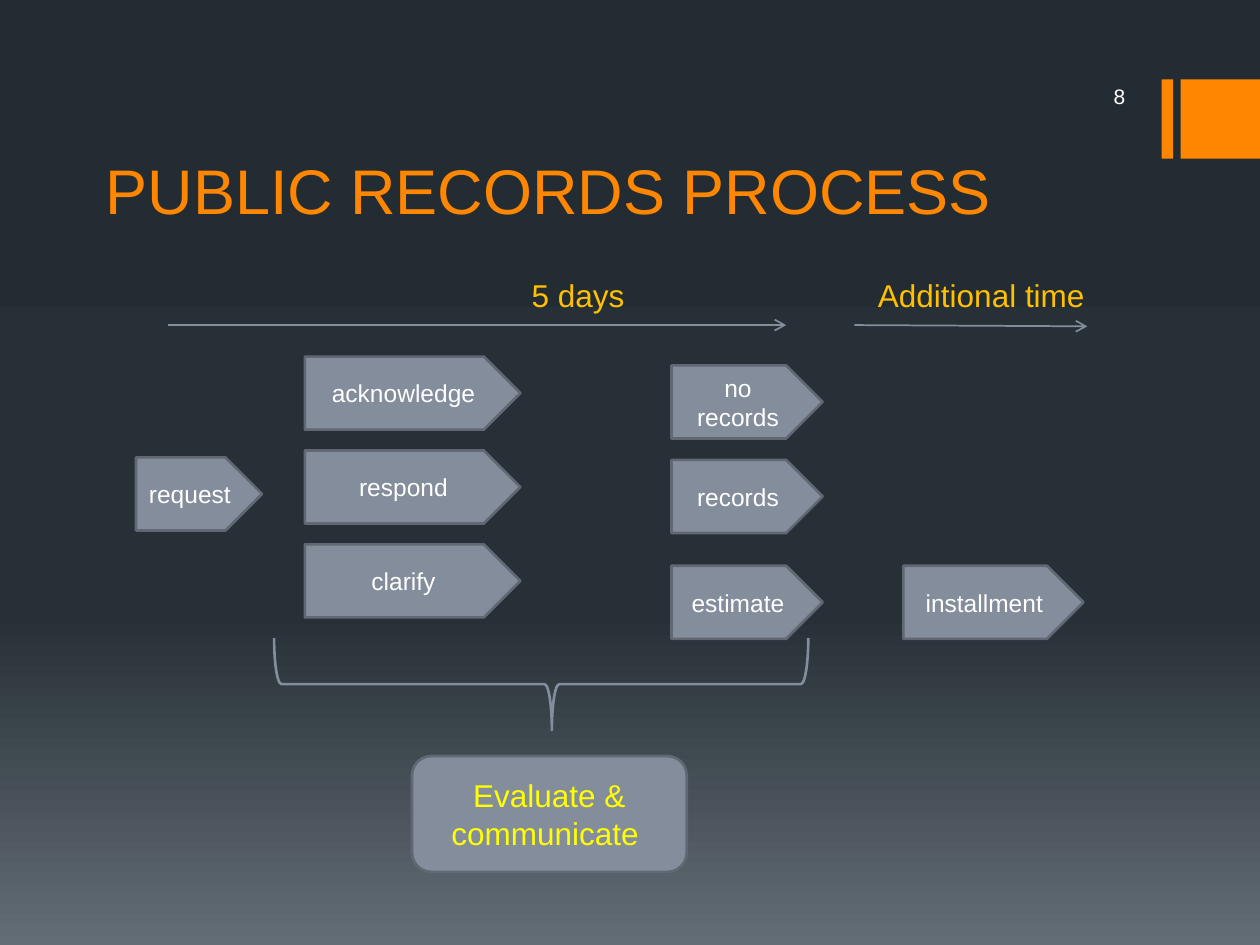
import copy
from dataclasses import dataclass

import pptx
import pptx.dml.color
import pptx.enum.shapes
import pptx.enum.text
import pptx.oxml
import pptx.oxml.ns
import pptx.util

SHAPE = pptx.enum.shapes.MSO_SHAPE
ALIGN = pptx.enum.text.PP_ALIGN
ANCHOR = pptx.enum.text.MSO_ANCHOR
COLUMNS, ROWS = 100, 75


@dataclass(frozen=True)
class Theme:
    font: str = "Arial"
    accent: str = "FF8600"
    steel: str = "838D9B"
    edge: str = "616873"
    white: str = "FFFFFF"
    yellow: str = "FFFF00"
    gold: str = "FFC000"
    backdrop: tuple = ((0, "242C33"), (0.65, "273037"), (1, "636D76"))
    title: int = 36
    label: int = 18
    step: int = 14
    number: int = 12
    thin: float = 1
    outline: float = 1.5


def color(code):
    return pptx.dml.color.RGBColor.from_string(code)


def assign(target, values):
    for name, value in values.items():
        setattr(target, name, value)


def append_element(parent, tag, attributes=""):
    namespace = pptx.oxml.ns.nsdecls("a")
    parent.append(pptx.oxml.parse_xml(f"<a:{tag} {namespace} {attributes}/>"))


class Sketch:
    """Draws on one slide; lengths are columns and rows of the grid."""

    def __init__(self, deck, theme):
        self.theme = theme
        self.column = deck.slide_width / COLUMNS
        self.row = deck.slide_height / ROWS
        self.page = deck.slides.add_slide(deck.slide_layouts[6])

    def place(self, *lengths):
        """Turn alternating columns and rows into slide lengths."""
        return [round(value * unit) for value, unit in
                zip(lengths, (self.column, self.row) * 2)]

    def backdrop(self):
        fill = self.page.background.fill
        fill.gradient()
        fill.gradient_angle = 270
        stops = self.page.element.find(".//" + pptx.oxml.ns.qn("a:gsLst"))
        stops.append(copy.deepcopy(stops[-1]))
        for stop, (position, code) in zip(fill.gradient_stops, self.theme.backdrop):
            stop.position = position
            stop.color.rgb = color(code)

    def set_text(self, shape, text, size, code, align, anchor):
        frame = shape.text_frame
        assign(frame, {"word_wrap": True, "vertical_anchor": anchor})
        para = frame.paragraphs[0]
        para.alignment = align
        span = para.add_run()
        span.text = text
        assign(span.font, {"name": self.theme.font, "size": pptx.util.Pt(size)})
        span.font.color.rgb = color(code)

    def text(self, area, text, size, code, align=ALIGN.LEFT, anchor=ANCHOR.TOP):
        box = self.page.shapes.add_textbox(*self.place(*area))
        self.set_text(box, text, size, code, align, anchor)

    def shape(self, kind, area, fill=None, line=None):
        shape = self.page.shapes.add_shape(kind, *self.place(*area))
        shape.shadow.inherit = False
        if fill:
            shape.fill.solid()
            shape.fill.fore_color.rgb = color(fill)
        else:
            shape.fill.background()
        if line:
            shape.line.color.rgb = color(line)
            shape.line.width = pptx.util.Pt(self.theme.outline)
        else:
            shape.line.fill.background()
        return shape

    def node(self, kind, area, text, size, code):
        shape = self.shape(kind, area, self.theme.steel, self.theme.edge)
        self.set_text(shape, text, size, code, ALIGN.CENTER, ANCHOR.MIDDLE)

    def step(self, left, top, width, text):
        self.node(SHAPE.PENTAGON, (left, top, width, 5.8), text,
                  self.theme.step, self.theme.white)

    def arrow(self, left, top, right, bottom):
        arrow = self.page.shapes.add_connector(
            pptx.enum.shapes.MSO_CONNECTOR.STRAIGHT,
            *self.place(left, top, right, bottom))
        arrow.line.color.rgb = color(self.theme.steel)
        arrow.line.width = pptx.util.Pt(self.theme.thin)
        properties = arrow.element.spPr
        outline = properties.find(pptx.oxml.ns.qn("a:ln"))
        append_element(outline, "tailEnd", 'type="arrow"')
        append_element(properties, "effectLst")

    def brace(self, area, curl, tip):
        """Draw a brace that opens upward; area is given before its quarter turn."""
        brace = self.shape(SHAPE.RIGHT_BRACE, area, line=self.theme.steel)
        brace.rotation = 90
        brace.adjustments[0] = curl
        brace.adjustments[1] = tip


def main():
    deck = pptx.Presentation()
    assign(deck, {"slide_width": pptx.util.Inches(10),
                  "slide_height": pptx.util.Inches(7.5)})
    theme = Theme()
    sketch = Sketch(deck, theme)
    sketch.backdrop()

    for left, width in ((92.2, 0.9), (93.7, 6.3)):
        sketch.shape(SHAPE.RECTANGLE, (left, 6.3, width, 6.3), theme.accent)
    sketch.text((7.4, 10.8, 74.2, 7.7), "PUBLIC RECORDS PROCESS",
                theme.title, theme.accent, anchor=ANCHOR.BOTTOM)
    sketch.text((80, 6, 10.3, 3.3), "8", theme.number, theme.white,
                ALIGN.RIGHT, ANCHOR.MIDDLE)

    for left, width, period in ((41.2, 10.8, "5 days"),
                                (68.7, 21.3, "Additional time")):
        sketch.text((left, 21.4, width, 4), period, theme.label, theme.gold)
    sketch.arrow(13.3, 25.8, 62.4, 25.8)
    sketch.arrow(67.8, 25.8, 86.3, 25.9)

    sketch.step(10.8, 36.3, 10, "request")
    for index, reply in enumerate(("acknowledge", "respond", "clarify")):
        sketch.step(24.2, 28.3 + 7.45 * index, 17.1, reply)
    for top, result in ((29, "no records"), (36.5, "records"), (44.9, "estimate")):
        sketch.step(53.3, top, 12, result)
    sketch.step(71.7, 44.9, 14.3, "installment")

    sketch.brace((39.3, 33.1, 7.3, 42.4), curl=0.08, tip=0.48)
    sketch.node(SHAPE.ROUNDED_RECTANGLE, (32.7, 60, 21.8, 9.2),
                "Evaluate & communicate ", theme.label, theme.yellow)
    deck.save("out.pptx")


if __name__ == "__main__":
    main()
